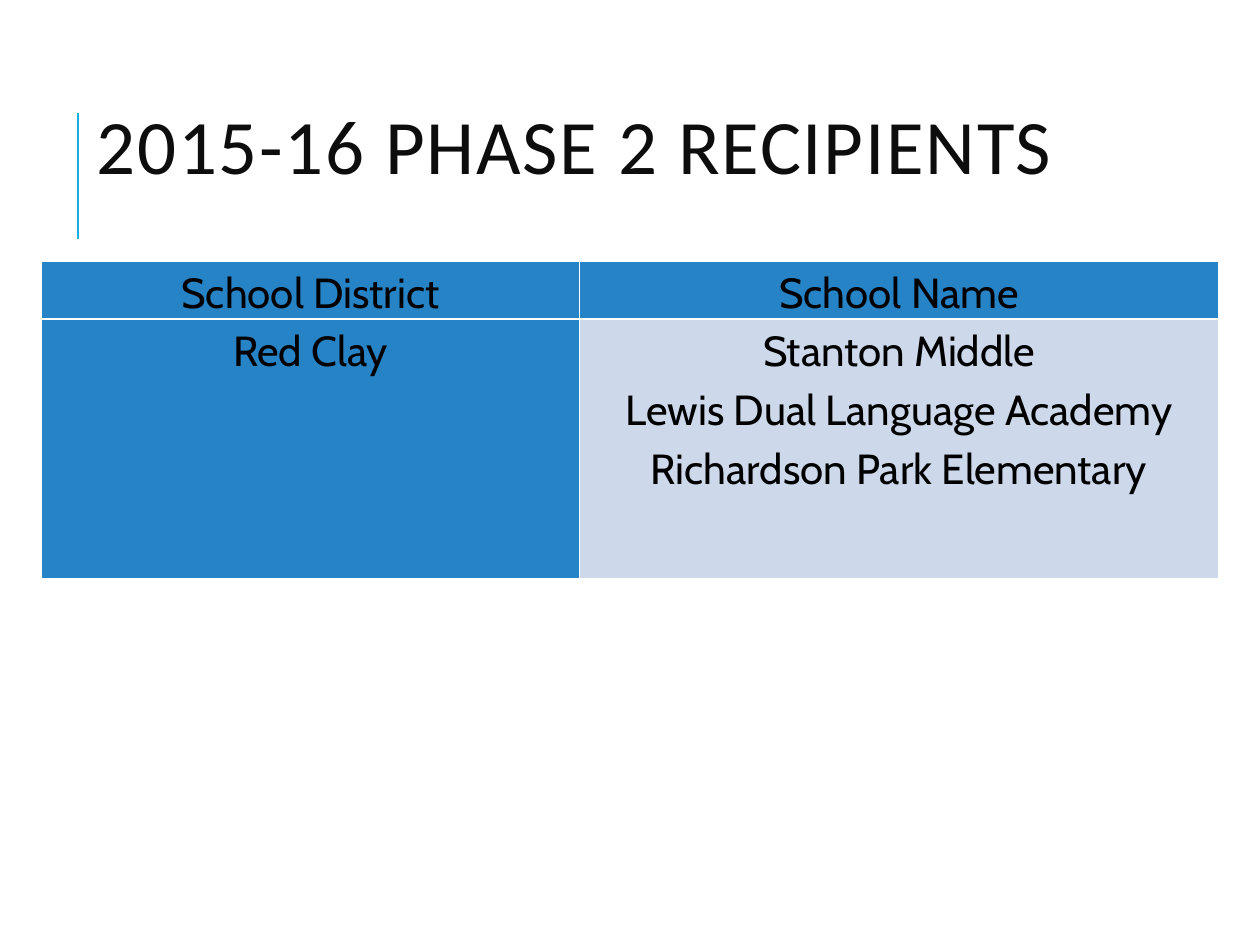
from lxml import etree
from pptx import Presentation
from pptx.dml.color import RGBColor
from pptx.enum.shapes import MSO_CONNECTOR
from pptx.enum.text import MSO_ANCHOR, PP_ALIGN
from pptx.oxml.ns import qn
from pptx.util import Inches, Pt

STRAIGHT = MSO_CONNECTOR.STRAIGHT
MIDDLE, TOP = MSO_ANCHOR.MIDDLE, MSO_ANCHOR.TOP
LEFT, CENTER = PP_ALIGN.LEFT, PP_ALIGN.CENTER

WHITE = RGBColor(0xFF, 0xFF, 0xFF)
BLACK = RGBColor(0x00, 0x00, 0x00)
INK = RGBColor(0x0D, 0x0D, 0x0D)
ACCENT = RGBColor(0x1C, 0xAD, 0xE4)
BLUE = RGBColor(0x26, 0x83, 0xC6)
PALE_BLUE = RGBColor(0xCD, 0xD9, 0xEA)

SLIDE_WIDTH, SLIDE_HEIGHT = 10, 7.5
HEADERS = ["School District", "School Name"]
DISTRICT = "Red Clay"
SCHOOLS = ["Stanton Middle", "Lewis Dual Language Academy", "Richardson Park Elementary"]


def write_text(frame, text, *, font, size, color, align=LEFT, line_spacing=1.0, tracking=0):
    """Write one paragraph per line of text; tracking is in points."""
    frame.text = text
    for paragraph in frame.paragraphs:
        paragraph.alignment = align
        paragraph.line_spacing = line_spacing
        for run in paragraph.runs:
            run.font.name = font
            run.font.size = Pt(size)
            run.font.bold = False
            run.font.color.rgb = color
            if tracking:
                run.font._element.set("spc", str(int(tracking * 100)))


def add_cell_borders(cell, color, width):
    properties = cell._tc.get_or_add_tcPr()
    for position, side in enumerate(("lnL", "lnR", "lnT", "lnB")):
        border = etree.Element(qn(f"a:{side}"), w=str(Pt(width)))
        fill = etree.SubElement(border, qn("a:solidFill"))
        etree.SubElement(fill, qn("a:srgbClr"), val=str(color))
        properties.insert(position, border)


class RecipientsSlide:
    """Holds the text styles and the slide; places are in inches."""

    title_style = dict(font="Calibri", size=44, color=INK, line_spacing=0.8, tracking=1)
    cell_style = dict(font="Cabin", size=24, color=BLACK, align=CENTER, line_spacing=1.15)

    def __init__(self, presentation):
        self.slide = presentation.slides.add_slide(presentation.slide_layouts[6])

    def add_rule(self, x, top, bottom):
        rule = self.slide.shapes.add_connector(
            STRAIGHT, Inches(x), Inches(bottom), Inches(x), Inches(top))
        rule.line.color.rgb = ACCENT
        rule.line.width = Pt(1.5)
        etree.SubElement(rule._element.spPr, qn("a:effectLst"))

    def add_title(self, text, *box):
        frame = self.slide.shapes.add_textbox(*map(Inches, box)).text_frame
        frame.word_wrap = True
        frame.vertical_anchor = MIDDLE
        write_text(frame, text, **self.title_style)

    def add_table(self, rows, fills, left, top, widths, heights):
        table = self.slide.shapes.add_table(
            len(rows), len(widths), Inches(left), Inches(top),
            Inches(sum(widths)), Inches(sum(heights))).table
        for column, width in zip(table.columns, widths):
            column.width = Inches(width)
        for row, height, texts, colors in zip(table.rows, heights, rows, fills):
            row.height = Inches(height)
            for cell, text, color in zip(row.cells, texts, colors):
                self.fill_cell(cell, text, color)

    def fill_cell(self, cell, text, color):
        cell.margin_left = cell.margin_right = Inches(0.07)
        cell.margin_top = cell.margin_bottom = 0
        cell.vertical_anchor = TOP
        cell.fill.solid()
        cell.fill.fore_color.rgb = color
        add_cell_borders(cell, WHITE, 1)
        write_text(cell.text_frame, text, **self.cell_style)


def main():
    presentation = Presentation()
    presentation.slide_width = Inches(SLIDE_WIDTH)
    presentation.slide_height = Inches(SLIDE_HEIGHT)

    recipients = RecipientsSlide(presentation)
    recipients.add_rule(0.62, 0.9, 1.9)
    recipients.add_title("2015-16 PHASE 2 RECIPIENTS", 0.67, 0.58, 9, 1.25)
    recipients.add_table(
        rows=[HEADERS, [DISTRICT, "\n".join(SCHOOLS)]],
        fills=[[BLUE, BLUE], [BLUE, PALE_BLUE]],
        left=0.33, top=2.07, widths=[4.27, 5.07], heights=[0.46, 2.06])

    presentation.save("out.pptx")


if __name__ == "__main__":
    main()
